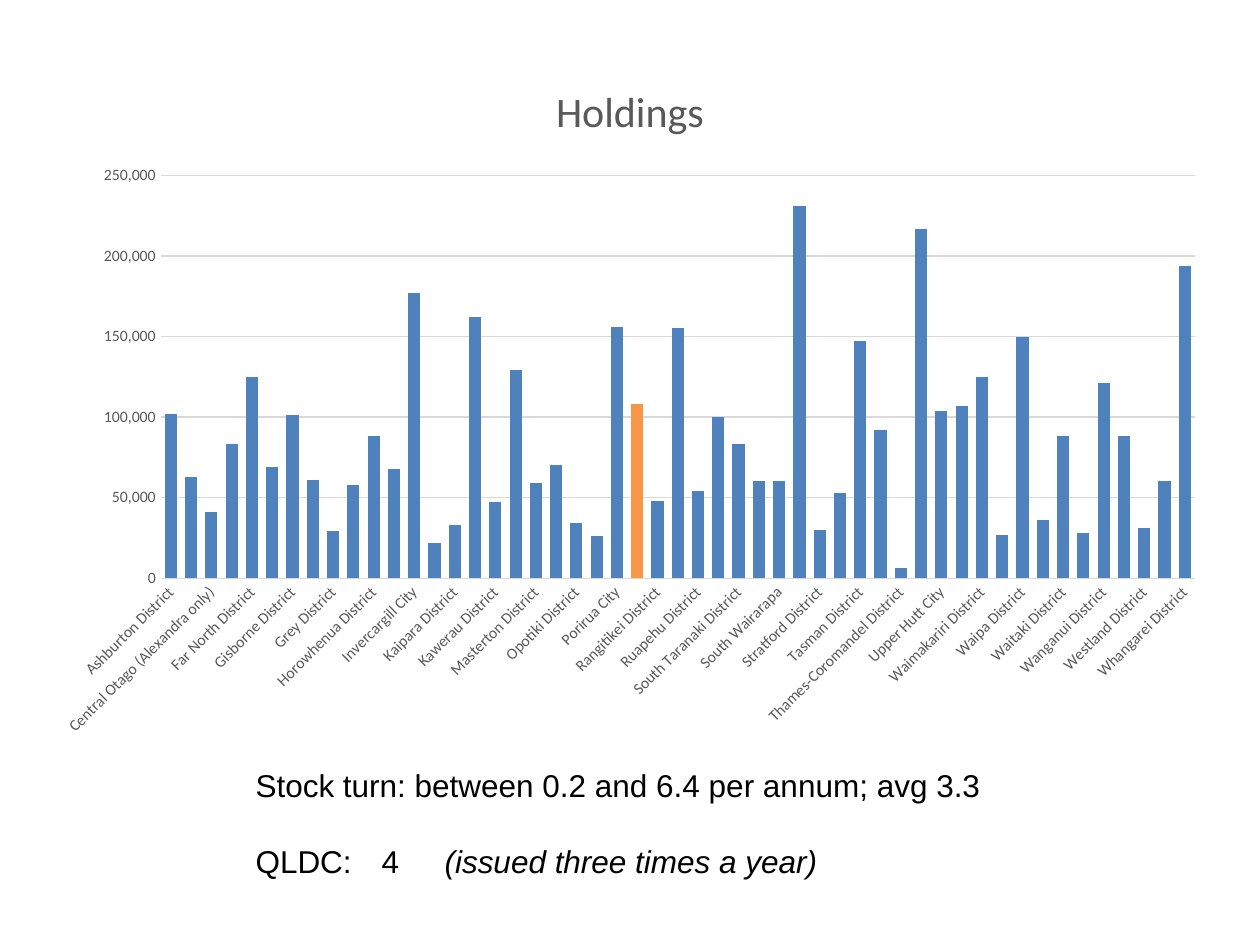
from dataclasses import dataclass

from pptx import Presentation
from pptx.chart.data import CategoryChartData
from pptx.dml.color import RGBColor
from pptx.enum.chart import XL_CHART_TYPE, XL_TICK_MARK
from pptx.enum.text import MSO_AUTO_SIZE
from pptx.util import Inches, Pt

COLUMN = XL_CHART_TYPE.COLUMN_CLUSTERED
NO_TICK = XL_TICK_MARK.NONE
GROW = MSO_AUTO_SIZE.SHAPE_TO_FIT_TEXT


@dataclass(frozen=True)
class Theme:
    chart_font: str = "Calibri"
    body_font: str = "Arial"
    black: RGBColor = RGBColor(0, 0, 0)
    grey: RGBColor = RGBColor(0x59, 0x59, 0x59)
    rule: RGBColor = RGBColor(0xD9, 0xD9, 0xD9)
    bar: RGBColor = RGBColor(0x4F, 0x81, 0xBD)
    highlight: RGBColor = RGBColor(0xF7, 0x96, 0x46)
    title_size: int = 24
    body_size: int = 18
    chart_size: int = 10
    axis_size: int = 9
    rule_width: float = 0.75


HIGHLIGHTED = "Queenstown-Lakes District"
HOLDINGS = {
    "Ashburton District": 102000,
    "Central Hawkes Bay District": 63000,
    "Central Otago (Alexandra only)": 41000,
    "Clutha District": 83000,
    "Far North District": 125000,
    "Feilding (Manawatu District)": 69000,
    "Gisborne District": 101000,
    "Gore District": 61000,
    "Grey District": 29000,
    "Hauraki District": 58000,
    "Horowhenua District": 88000,
    "Hurunui District": 68000,
    "Invercargill City": 177000,
    "Kaikoura District": 22000,
    "Kaipara District": 33000,
    "Kapiti Coast District": 162000,
    "Kawerau District": 47000,
    "Marlborough District": 129000,
    "Masterton District": 59000,
    "Matamata-Piako": 70000,
    "Opotiki District": 34000,
    "Otorohanga District": 26000,
    "Porirua City": 156000,
    HIGHLIGHTED: 108000,
    "Rangitikei District": 48000,
    "Rotorua District": 155000,
    "Ruapehu District": 54000,
    "Selwyn District": 100000,
    "South Taranaki District": 83000,
    "South Waikato District": 60000,
    "South Wairarapa": 60000,
    "Southland District": 231000,
    "Stratford District": 30000,
    "Tararua District": 53000,
    "Tasman District": 147000,
    "Taupo District": 92000,
    "Thames-Coromandel District": 6000,
    "Timaru District": 217000,
    "Upper Hutt City": 104000,
    "Waikato District": 107000,
    "Waimakariri District": 125000,
    "Waimate District": 27000,
    "Waipa District": 150000,
    "Wairoa District": 36000,
    "Waitaki District": 88000,
    "Waitomo District": 28000,
    "Wanganui District": 121000,
    "Western Bay of Plenty District": 88000,
    "Westland District": 31000,
    "Whakatane District": 60000,
    "Whangarei District": 194000,
}


class SlideBuilder:
    def __init__(self, slide, theme):
        self.s = slide
        self.theme = theme

    def style_font(self, font, name, size, color):
        font.name = name
        font.size = Pt(size)
        font.color.rgb = color

    def style_line(self, line):
        line.color.rgb = self.theme.rule
        line.width = Pt(self.theme.rule_width)

    def column_chart(self, box, title, values, highlighted):
        t = self.theme
        data = CategoryChartData(number_format="#,##0")
        data.categories = list(values)
        data.add_series("Series 1", list(values.values()))
        chart = self.s.shapes.add_chart(COLUMN, *map(Inches, box), data).chart
        self.style_font(chart.font, t.chart_font, t.chart_size, t.black)
        chart.has_legend = False

        # Title
        chart.has_title = True
        chart.chart_title.include_in_layout = False
        r = chart.chart_title.text_frame.paragraphs[0].add_run()
        r.text = title
        r.font.bold = False
        self.style_font(r.font, t.chart_font, t.title_size, t.grey)

        # Columns
        plot = chart.plots[0]
        plot.gap_width = 67
        plot.vary_by_categories = False
        series = plot.series[0]
        series.invert_if_negative = False
        point = series.points[list(values).index(highlighted)]
        for item, color in ((series, t.bar), (point, t.highlight)):
            item.format.fill.solid()
            item.format.fill.fore_color.rgb = color

        # Axes
        cat_axis, val_axis = chart.category_axis, chart.value_axis
        for axis in (cat_axis, val_axis):
            axis.major_tick_mark = axis.minor_tick_mark = NO_TICK
            self.style_font(axis.tick_labels.font, t.chart_font, t.axis_size, t.grey)
        self.style_line(cat_axis.format.line)
        # Slant the category labels by 45 degrees
        cat_axis._element.txPr.bodyPr.set("rot", "-2700000")
        val_axis.format.line.fill.background()
        val_axis.has_major_gridlines = True
        self.style_line(val_axis.major_gridlines.format.line)
        val_axis.minimum_scale, val_axis.maximum_scale = 0, 250000
        val_axis.major_unit = 50000
        val_axis.tick_labels.number_format = "#,##0"
        val_axis.tick_labels.number_format_is_linked = False

    def text(self, box, paragraphs, gap):
        t = self.theme
        tf = self.s.shapes.add_textbox(*map(Inches, box)).text_frame
        tf.word_wrap = True
        tf.auto_size = GROW
        for i, runs in enumerate(paragraphs):
            p = tf.add_paragraph() if i else tf.paragraphs[0]
            if i:
                p.space_before = Pt(gap)
            for content, italic in runs:
                r = p.add_run()
                r.text = content
                r.font.italic = italic
                self.style_font(r.font, t.body_font, t.body_size, t.black)


def main():
    prs = Presentation()
    prs.slide_width, prs.slide_height = Inches(10), Inches(7.5)
    builder = SlideBuilder(prs.slides.add_slide(prs.slide_layouts[6]), Theme())

    # Holdings by district
    builder.column_chart((0.33, 0.44, 9.34, 5.51), "Holdings", HOLDINGS, HIGHLIGHTED)

    # Stock turn summary
    builder.text(
        (1.93, 6.03, 6.38, 1),
        [
            [("Stock turn: between 0.2 and 6.4 per annum; avg 3.3", False)],
            [("QLDC:\t4\t", False), ("(issued three times a year)", True)],
        ],
        gap=22,
    )
    prs.save("out.pptx")


if __name__ == "__main__":
    main()
